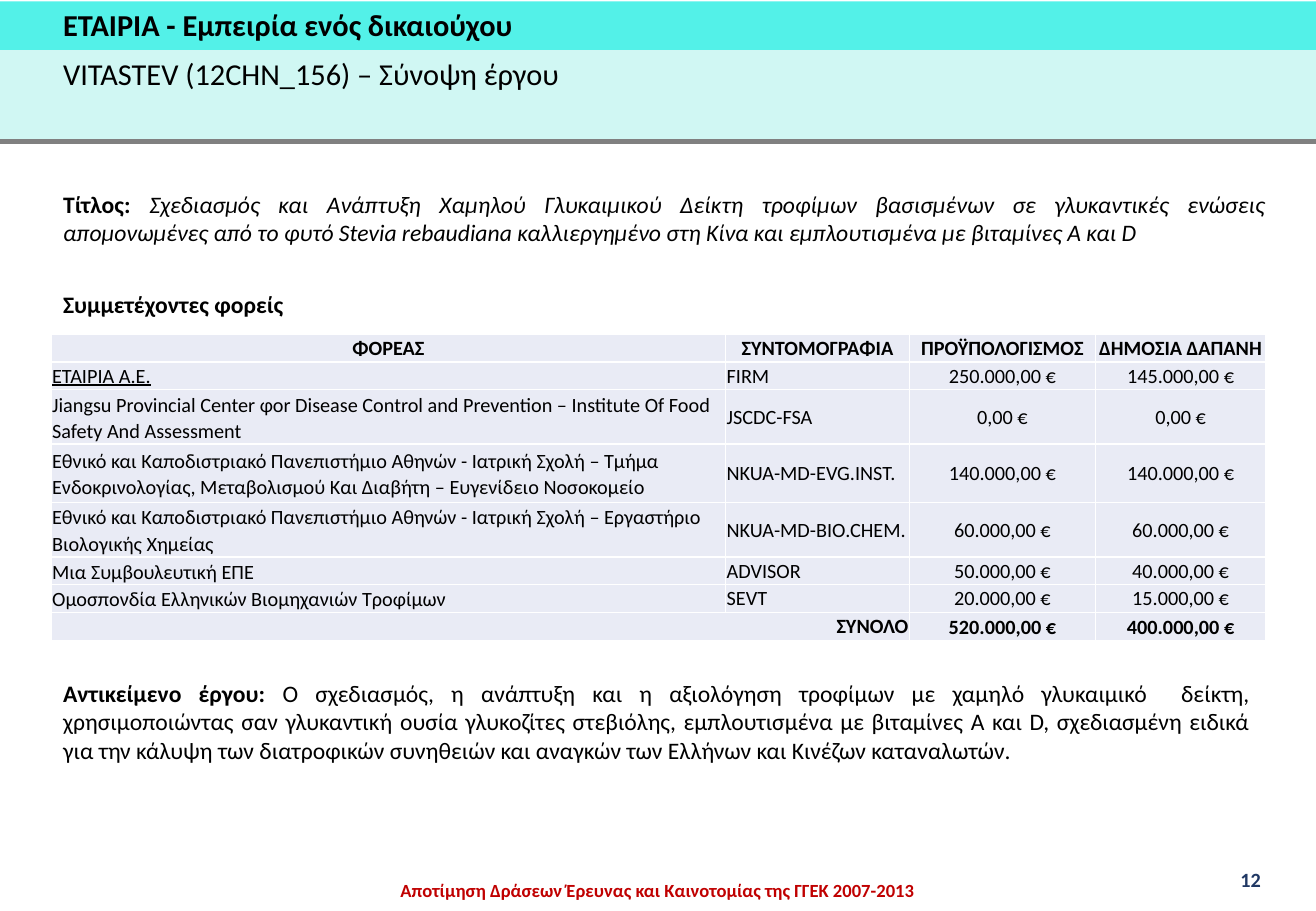
from dataclasses import dataclass

from lxml.etree import SubElement
from pptx import Presentation
from pptx.dml.color import RGBColor
from pptx.enum.shapes import MSO_CONNECTOR, MSO_SHAPE
from pptx.enum.text import MSO_ANCHOR, PP_ALIGN
from pptx.oxml.ns import qn
from pptx.util import Cm, Pt


@dataclass(frozen=True)
class Theme:
    """Colours, font and type sizes of the slide."""
    font: str = "Calibri"
    ink: str = "000000"
    red: str = "C00000"
    navy: str = "203864"
    aqua: str = "53F1E8"
    pale: str = "D0F7F3"
    grey: str = "808080"
    cell: str = "E9EBF5"
    white: str = "FFFFFF"
    title: int = 18
    body: int = 14
    small: int = 12
    foot: int = 11


THEME = Theme()
LEFT = 1.07
WIDTH = 27.51
COLS = (14.1, 3.84, 3.89, 3.56)
ROWS = (0.58, 0.58, 1.14, 1.22, 1.14, 0.58, 0.58, 0.58)
HEAD = ("ΦΟΡΕΑΣ", "ΣΥΝΤΟΜΟΓΡΑΦΙΑ", "ΠΡΟΫΠΟΛΟΓΙΣΜΟΣ", "ΔΗΜΌΣΙΑ ΔΑΠΑΝΗ")
BODIES = (
    ("ΕΤΑΙΡΙΑ Α.Ε.", "FIRM", "250.000,00 €", "145.000,00 €"),
    ("Jiangsu Provincial Center φor Disease Control and Prevention – "
     "Institute Of Food Safety And Assessment",
     "JSCDC-FSA", "0,00 €", "0,00 €"),
    ("Εθνικό και Καποδιστριακό Πανεπιστήμιο Αθηνών - Ιατρική Σχολή – Τμήμα "
     "Ενδοκρινολογίας, Μεταβολισμού Και Διαβήτη – Ευγενίδειο Νοσοκομείο",
     "NKUA-MD-EVG.INST.", "140.000,00 €", "140.000,00 €"),
    ("Εθνικό και Καποδιστριακό Πανεπιστήμιο Αθηνών - Ιατρική Σχολή – "
     "Εργαστήριο Βιολογικής Χημείας",
     "NKUA-MD-BIO.CHEM.", "60.000,00 €", "60.000,00 €"),
    ("Μια Συμβουλευτική ΕΠΕ", "ADVISOR", "50.000,00 €", "40.000,00 €"),
    ("Ομοσπονδία Ελληνικών Βιομηχανιών Τροφίμων",
     "SEVT", "20.000,00 €", "15.000,00 €"),
)
TOTAL = ("ΣΥΝΟΛΟ", "", "520.000,00 €", "400.000,00 €")


def add_run(para, text, size, color=THEME.ink, bold=False, italic=False):
    """Add one styled run to a paragraph and return it."""
    run = para.add_run()
    run.text = text
    font = run.font
    font.name, font.size = THEME.font, Pt(size)
    font.bold, font.italic = bold, italic
    font.color.rgb = RGBColor.from_string(color)
    return run


def add_text(slide, left, top, width, height, align=PP_ALIGN.LEFT, wrap=True):
    """Add a text box and return its frame and first paragraph."""
    box = slide.shapes.add_textbox(Cm(left), Cm(top), Cm(width), Cm(height))
    frame = box.text_frame
    frame.word_wrap = wrap
    para = frame.paragraphs[0]
    para.alignment = align
    return frame, para


def add_band(slide, top, height, color):
    """Add a plain band across the slide."""
    band = slide.shapes.add_shape(
        MSO_SHAPE.RECTANGLE, 0, Cm(top), Cm(WIDTH), Cm(height))
    band.shadow.inherit = False
    band.fill.solid()
    band.fill.fore_color.rgb = RGBColor.from_string(color)
    band.line.fill.background()


def add_rule(slide, top):
    """Add the grey rule under the bands."""
    rule = slide.shapes.add_connector(
        MSO_CONNECTOR.STRAIGHT, 0, Cm(top), Cm(WIDTH), Cm(top))
    rule.line.color.rgb = RGBColor.from_string(THEME.grey)
    rule.line.width = Pt(3)
    SubElement(rule.element.spPr, qn("a:effectLst"))


def style_cell(cell):
    """Give a cell white borders, a fill and thin margins."""
    props = cell._tc.get_or_add_tcPr()
    for side in ("L", "R", "T", "B"):
        edge = SubElement(props, qn(f"a:ln{side}"), w=str(Pt(1)))
        fill = SubElement(edge, qn("a:solidFill"))
        SubElement(fill, qn("a:srgbClr"), val=THEME.white)
    cell.fill.solid()
    cell.fill.fore_color.rgb = RGBColor.from_string(THEME.cell)
    cell.margin_left = cell.margin_right = cell.margin_top = Cm(0.02)
    cell.margin_bottom = 0
    cell.vertical_anchor = MSO_ANCHOR.MIDDLE


def fill_cell(cell, text, row, col):
    """Write a cell by its place in the table."""
    last = len(ROWS) - 1
    style_cell(cell)
    if not text:
        return
    para = cell.text_frame.paragraphs[0]
    centred = row == 0 or col > 1
    para.alignment = PP_ALIGN.CENTER if centred else PP_ALIGN.LEFT
    run = add_run(para, text, THEME.small, bold=row in (0, last))
    if col == 0 and row == 1:
        run.font.underline = True
    if col == 0 and 1 < row < last:
        para.line_spacing = 1.07
    if row == last and col == 0:
        para.alignment = PP_ALIGN.RIGHT
    elif row == last:
        cell.vertical_anchor = MSO_ANCHOR.BOTTOM


def add_grid(slide):
    """Add the table of partners and budgets."""
    frame = slide.shapes.add_table(
        len(ROWS), len(COLS), Cm(LEFT), Cm(6.99), Cm(sum(COLS)), Cm(sum(ROWS)))
    table = frame.table
    table.first_row = table.horz_banding = False
    for col, width in zip(table.columns, COLS):
        col.width = Cm(width)
    for row, height in zip(table.rows, ROWS):
        row.height = Cm(height)
    for row, texts in enumerate((HEAD, *BODIES, TOTAL)):
        for col, text in enumerate(texts):
            fill_cell(table.cell(row, col), text, row, col)
    last = len(ROWS) - 1
    table.cell(last, 0).merge(table.cell(last, 1))


def add_header(slide):
    """Add the bands, the rule and the two headings."""
    add_band(slide, 0.03, 1.02, THEME.aqua)
    add_band(slide, 1.05, 1.9, THEME.pale)
    add_rule(slide, 2.95)
    para = add_text(slide, LEFT, 1.02, 15.62, 1.02)[1]
    add_run(para, "VITASTEV (12CHN_156) – Σύνοψη έργου", THEME.title)
    para = add_text(slide, LEFT, 0, 10.16, 1.02, wrap=False)[1]
    add_run(para, "ΕΤΑΙΡΙΑ - Εμπειρία ενός δικαιούχου", THEME.title, bold=True)


def add_body(slide):
    """Add the project title, the table and the project aim."""
    para = add_text(slide, LEFT, 3.84, 25.65, 1.45, PP_ALIGN.JUSTIFY)[1]
    add_run(para, "Τίτλος: ", THEME.body, bold=True)
    add_run(para, "Σχεδιασμός και Ανάπτυξη Χαμηλού Γλυκαιμικού Δείκτη τροφίμων "
            "βασισμένων σε γλυκαντικές ενώσεις απομονωμένες από το φυτό Stevia "
            "rebaudiana καλλιεργημένο στη Κίνα και εμπλουτισμένα με βιταμίνες "
            "Α και D", THEME.body, italic=True)
    para = add_text(slide, LEFT, 5.94, 6.88, 0.86)[1]
    add_run(para, "Συμμετέχοντες φορείς", THEME.body, bold=True)
    add_grid(slide)
    para = add_text(slide, LEFT, 14.07, 25.32, 2.06, PP_ALIGN.JUSTIFY)[1]
    add_run(para, "Αντικείμενο έργου: ", THEME.body, bold=True)
    add_run(para, "O σχεδιασμός, η ανάπτυξη και η αξιολόγηση τροφίμων με χαμηλό "
            "γλυκαιμικό  δείκτη, χρησιμοποιώντας σαν γλυκαντική ουσία "
            "γλυκοζίτες στεβιόλης, εμπλουτισμένα με βιταμίνες Α και D, "
            "σχεδιασμένη ειδικά για την κάλυψη των διατροφικών συνηθειών και "
            "αναγκών των Ελλήνων και Κινέζων καταναλωτών.", THEME.body)


def add_footer(slide):
    """Add the footer line and the page number."""
    frame, para = add_text(slide, 7.16, 17.95, 13.18, 0.97, PP_ALIGN.CENTER)
    frame.margin_left = frame.margin_right = 0
    frame.margin_top = frame.margin_bottom = 0
    para.line_spacing = Pt(25.3)
    add_run(para, "Aποτίμηση Δράσεων Έρευνας και Καινοτομίας της ΓΓΕΚ 2007-2013",
            THEME.foot, THEME.red, bold=True)
    para = add_text(slide, 25.68, 18.01, 1.32, 0.76)[1]
    add_run(para, "12", THEME.small, THEME.navy, bold=True)


def main():
    """Build the slide and save it."""
    deck = Presentation()
    deck.slide_width, deck.slide_height = Cm(WIDTH), Cm(19.05)
    slide = deck.slides.add_slide(deck.slide_layouts[6])
    add_header(slide)
    add_body(slide)
    add_footer(slide)
    deck.save("out.pptx")


if __name__ == "__main__":
    main()
